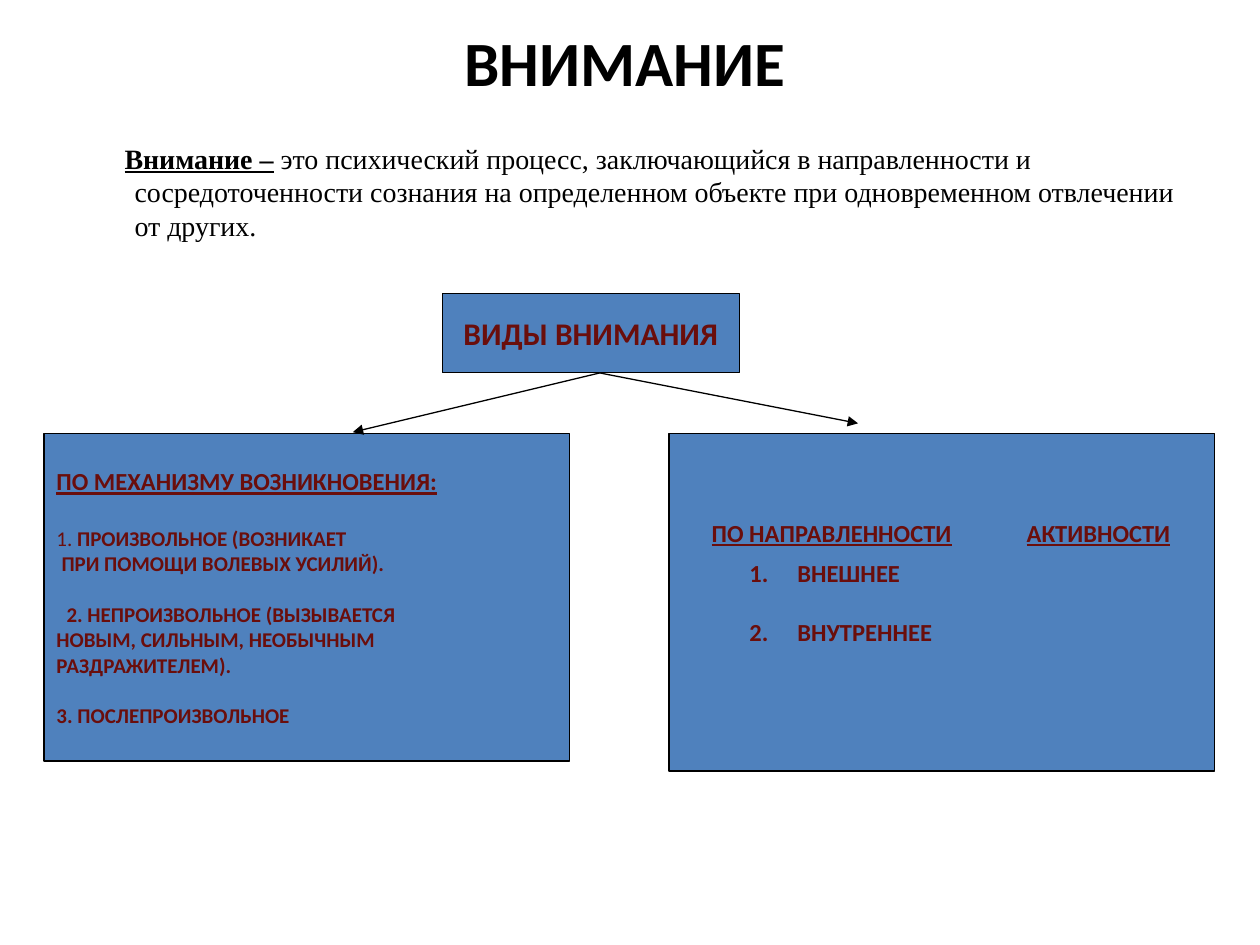
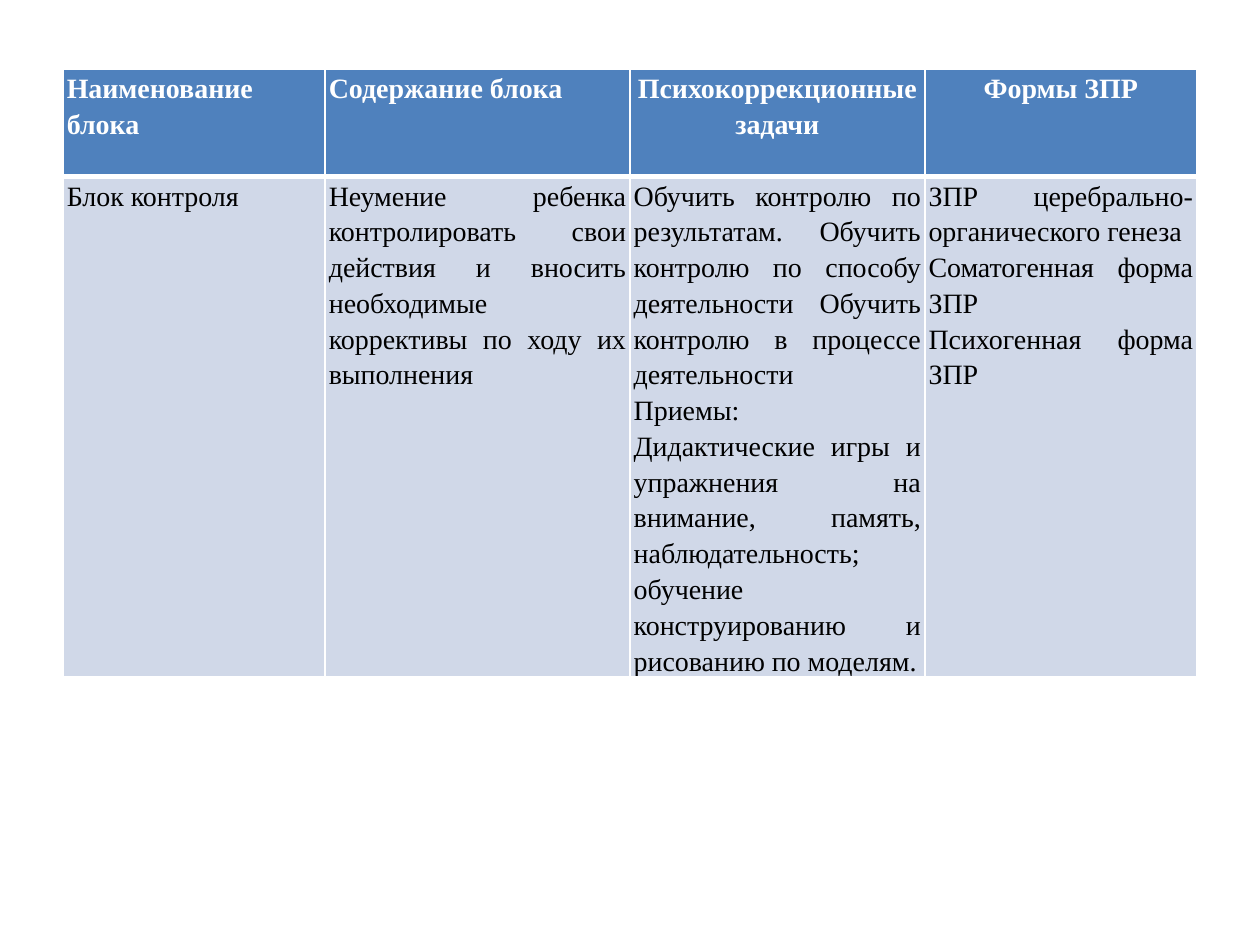
"""Build two slides on attention: a diagram of its kinds and a table of blocks."""
from dataclasses import dataclass, field

from lxml.etree import SubElement
from pptx import Presentation
from pptx.dml.color import RGBColor
from pptx.enum.shapes import MSO_CONNECTOR, MSO_SHAPE
from pptx.enum.text import MSO_ANCHOR, PP_ALIGN
from pptx.oxml.ns import qn
from pptx.util import Inches, Pt

BLACK = RGBColor(0x00, 0x00, 0x00)
WHITE = RGBColor(0xFF, 0xFF, 0xFF)
BLUE = RGBColor(0x4F, 0x81, 0xBD)
PALE = RGBColor(0xD0, 0xD8, 0xE8)
WINE = RGBColor(0x6A, 0x0E, 0x0C)

SANS = {"name": "Calibri", "bold": True}
SERIF = {"name": "Times New Roman", "size": Pt(16), "bold": False}
TITLE = SANS | {"size": Pt(36)}
ROOT = SANS | {"size": Pt(18)}
HEAD = SANS | {"size": Pt(14), "underline": True}
ITEM = SANS | {"size": Pt(14)}
NOTE = SANS | {"size": Pt(12)}
TERM = SERIF | {"bold": True, "underline": True}

LEFT = {"alignment": PP_ALIGN.LEFT}
MID = {"alignment": PP_ALIGN.CENTER}
FULL = {"alignment": PP_ALIGN.JUSTIFY, "line_spacing": 1.15}
GAP = {"space_before": Pt(14.6)}
WIDE = {"space_before": Pt(17.1)}


@dataclass
class Run:
    """Hold a piece of text and its font values."""
    text: str
    font: dict
    color: RGBColor = WINE


@dataclass
class Para:
    """Hold the runs of a paragraph with its layout and indents."""
    runs: list[Run]
    form: dict = field(default_factory=lambda: LEFT)
    hang: tuple[float, float] = (0, 0)
    count: bool = False


@dataclass
class Box:
    """Hold the place and text of a text box or a filled rectangle."""
    area: tuple[float, float, float, float]
    paras: list[Para] = field(default_factory=list)
    solid: bool = False
    anchor: MSO_ANCHOR = MSO_ANCHOR.TOP


def apply(item, form: dict) -> None:
    """Set each format value on an object."""
    for key, val in form.items():
        setattr(item, key, val)


def write(frame, paras: list[Para]) -> None:
    """Fill a text frame with paragraphs, breaking lines at line ends."""
    for num, para in enumerate(paras):
        line = frame.add_paragraph() if num else frame.paragraphs[0]
        apply(line, para.form)
        props = line._p.get_or_add_pPr()
        edge, first = para.hang
        props.set("marL", str(Inches(edge)))
        props.set("indent", str(Inches(first)))
        if para.count:
            SubElement(props, qn("a:buAutoNum"), type="arabicPeriod")
        for part in para.runs:
            for turn, text in enumerate(part.text.split("\n")):
                if turn:
                    line.add_line_break()
                run = line.add_run()
                run.text = text
                apply(run.font, part.font)
                run.font.color.rgb = part.color


def draw(slide, box: Box) -> None:
    """Draw a box with its text."""
    place = [Inches(val) for val in box.area]
    if box.solid:
        shape = slide.shapes.add_shape(MSO_SHAPE.RECTANGLE, *place)
        shape.shadow.inherit = False
        shape.fill.solid()
        shape.fill.fore_color.rgb = BLUE
        shape.line.color.rgb = BLACK
        shape.line.width = Pt(0.75)
    else:
        shape = slide.shapes.add_textbox(*place)
    apply(shape.text_frame, {"word_wrap": True, "vertical_anchor": box.anchor})
    write(shape.text_frame, box.paras)


def arrow(slide, start: tuple[float, float], end: tuple[float, float]) -> None:
    """Draw a thin black arrow."""
    ends = [Inches(val) for val in start + end]
    link = slide.shapes.add_connector(MSO_CONNECTOR.STRAIGHT, *ends)
    link.line.color.rgb = BLACK
    link.line.width = Pt(0.75)
    SubElement(link.line._get_or_add_ln(), qn("a:tailEnd"), type="triangle")
    SubElement(link._element.spPr, qn("a:effectLst"))


def edge(cell, side: str, width: float) -> None:
    """Give one side of a cell a white border."""
    line = SubElement(cell._tc.get_or_add_tcPr(), qn(f"a:ln{side}"), w=str(Pt(width)))
    fill = SubElement(line, qn("a:solidFill"))
    SubElement(fill, qn("a:srgbClr"), val=str(WHITE))


def note(text: str, form: dict = LEFT, start: float = 0) -> Para:
    """Make a small bold line of the list of kinds."""
    return Para([Run(text, NOTE)], LEFT | form, (start, 0))


def point(text: str, form: dict = LEFT) -> Para:
    """Make a numbered item."""
    return Para([Run(text, ITEM)], LEFT | form, (0.38, -0.38), True)


def label(text: str) -> Para:
    """Make an underlined heading."""
    return Para([Run(text, HEAD)])


TOPIC = Para([
    Run("Внимание –", TERM, BLACK),
    Run(" это психический процесс, заключающийся в направленности и "
        "сосредоточенности сознания на определенном объекте при одновременном "
        "отвлечении от других.", SERIF, BLACK),
], LEFT, (0.38, -0.08))

ORIGIN = [
    label("ПО МЕХАНИЗМУ ВОЗНИКНОВЕНИЯ:"),
    Para([Run("1. ", NOTE | {"bold": False}), Run("ПРОИЗВОЛЬНОЕ (ВОЗНИКАЕТ", NOTE)],
         LEFT | WIDE),
    note("ПРИ ПОМОЩИ ВОЛЕВЫХ УСИЛИЙ).", start=0.04),
    note("2. НЕПРОИЗВОЛЬНОЕ (ВЫЗЫВАЕТСЯ", GAP, 0.08),
    note("НОВЫМ, СИЛЬНЫМ, НЕОБЫЧНЫМ"),
    note("РАЗДРАЖИТЕЛЕМ)."),
    note("3. ПОСЛЕПРОИЗВОЛЬНОЕ", GAP),
]

BOXES = [
    Box((0.55, 0.18, 8.82, 0.61), [Para([Run("ВНИМАНИЕ", TITLE, BLACK)], MID)],
        anchor=MSO_ANCHOR.MIDDLE),
    Box((0.59, 1.07, 9, 4.95), [TOPIC]),
    Box((3.51, 2.33, 2.36, 0.63), [Para([Run("ВИДЫ ВНИМАНИЯ", ROOT)], MID)],
        True, MSO_ANCHOR.MIDDLE),
    Box((5.31, 3.44, 4.33, 2.68), solid=True),
    Box((0.35, 3.44, 4.17, 2.6), ORIGIN, True, MSO_ANCHOR.MIDDLE),
    Box((5.55, 4.06, 2.4, 0.34), [label("ПО НАПРАВЛЕННОСТИ")]),
    Box((8.05, 4.06, 1.5, 0.34), [label("АКТИВНОСТИ")]),
    Box((5.85, 4.38, 2.53, 0.81), [point("ВНЕШНЕЕ"), point("ВНУТРЕННЕЕ", WIDE)]),
]

COLS = (2.08, 2.42, 2.34, 2.16)
ROWS = (0.85, 3.97)
CELLS = [
    [["Наименование", "блока"], ["Содержание блока"],
     ["Психокоррекционные задачи"], ["Формы ЗПР"]],
    [["Блок контроля"],
     ["Неумение ребенка контролировать свои действия и вносить необходимые \n"
      "коррективы по ходу их выполнения"],
     ["Обучить контролю по результатам. Обучить контролю по способу деятельности "
      "Обучить контролю в процессе деятельности",
      "Приемы: Дидактические игры и упражнения на внимание, память, "
      "наблюдательность; обучение конструированию и рисованию по моделям."],
     ["ЗПР церебрально-органического генеза", "Соматогенная форма ЗПР",
      "Психогенная форма ЗПР"]],
]
INSET = {"margin_left": Inches(0.03), "margin_right": Inches(0.03),
         "margin_top": 0, "margin_bottom": 0}


def chart_kinds(slide) -> None:
    """Draw the diagram of the kinds of attention."""
    for box in BOXES:
        draw(slide, box)
    for end in ((6.81, 3.36), (2.8, 3.43)):
        arrow(slide, (4.76, 2.96), end)


def list_blocks(slide) -> None:
    """Draw the table of blocks."""
    place = [Inches(val) for val in (0.5, 0.55, sum(COLS), sum(ROWS))]
    table = slide.shapes.add_table(len(ROWS), len(COLS), *place).table
    apply(table, {"first_row": False, "horz_banding": False})
    for col, width in zip(table.columns, COLS):
        col.width = Inches(width)
    for row, high in zip(table.rows, ROWS):
        row.height = Inches(high)
    for top, texts in enumerate(CELLS):
        for left, lines in enumerate(texts):
            cell = table.cell(top, left)
            apply(cell, INSET)
            sides = {"L": 1, "R": 1, "T": 3 if top else 1, "B": 1 if top else 3}
            for side, width in sides.items():
                edge(cell, side, width)
            cell.fill.solid()
            cell.fill.fore_color.rgb = PALE if top else BLUE
            font = SERIF | {"bold": not top}
            color = BLACK if top else WHITE
            form = FULL if top or left < 2 else FULL | MID
            write(cell.text_frame, [Para([Run(text, font, color)], form) for text in lines])


def main() -> None:
    """Build and save the deck."""
    deck = Presentation()
    apply(deck, {"slide_width": Inches(10), "slide_height": Inches(7.5)})
    for build in (chart_kinds, list_blocks):
        build(deck.slides.add_slide(deck.slide_layouts[6]))
    deck.save("out.pptx")


if __name__ == "__main__":
    main()
